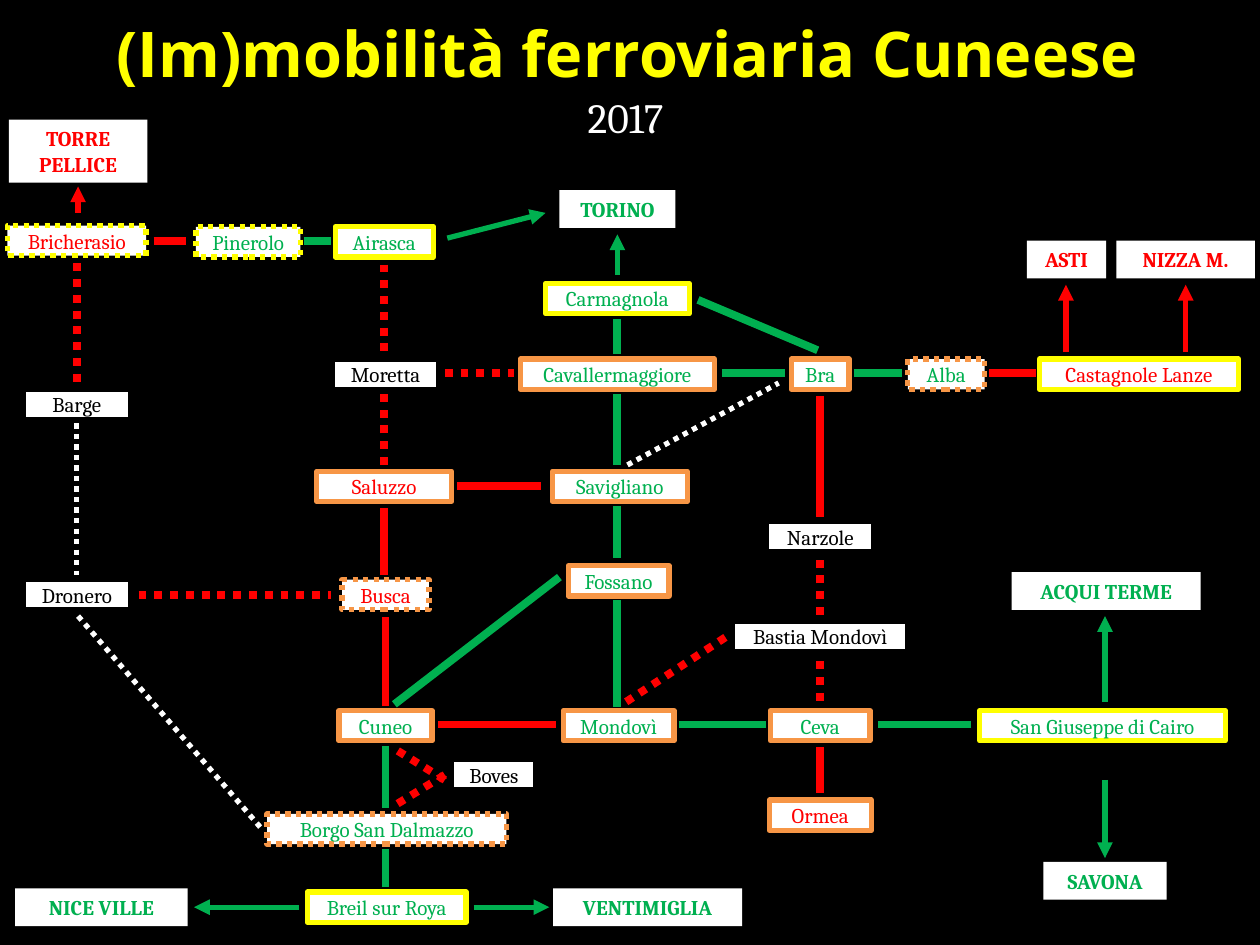
from dataclasses import dataclass

from lxml.etree import SubElement
from pptx import Presentation
from pptx.dml.color import RGBColor
from pptx.enum.dml import MSO_LINE
from pptx.enum.shapes import MSO_CONNECTOR, MSO_SHAPE
from pptx.enum.text import MSO_ANCHOR, PP_ALIGN
from pptx.oxml.ns import qn
from pptx.util import Inches, Pt

COLORS = {"black": "000000", "white": "FFFFFF", "yellow": "FFFF00",
          "orange": "F79646", "green": "00B050", "red": "FF0000"}
SERIF, SANS = "Cambria", "Open Sans"
STATION_HEIGHT = 0.24

# Shared columns and rows of the railway map
WEST, SALUZZO, TURIN, CEVA = 0.61, 3.06, 4.9, 6.51
AIRASCA, MORETTA, SAVIGLIANO, BUSCA, CUNEO, BREIL = 1.91, 2.97, 3.86, 4.72, 5.76, 7.2

# Name, centre x, centre y, width, text colour, border colour, dashed border
STATIONS = [
    ("Bricherasio", WEST, AIRASCA, 1.1, "red", "yellow", True),
    ("Pinerolo", 1.97, 1.92, 0.83, "green", "yellow", True),
    ("Airasca", 3.05, 1.92, 0.78, "green", "yellow", False),
    ("Carmagnola", TURIN, 2.37, 1.14, "green", "yellow", False),
    ("Moretta", SALUZZO, MORETTA, 0.85, "black", "black", False),
    ("Cavallermaggiore", TURIN, MORETTA, 1.54, "green", "orange", False),
    ("Bra", CEVA, MORETTA, 0.46, "green", "orange", False),
    ("Alba", 7.51, MORETTA, 0.61, "green", "orange", True),
    ("Castagnole Lanze", 9.04, MORETTA, 1.58, "red", "yellow", False),
    ("Barge", WEST, 3.21, 0.85, "black", "black", False),
    ("Saluzzo", 3.05, SAVIGLIANO, 1.07, "red", "orange", False),
    ("Savigliano", 4.92, SAVIGLIANO, 1.07, "green", "orange", False),
    ("Narzole", CEVA, 4.26, 0.85, "black", "black", False),
    ("Fossano", 4.91, 4.61, 0.8, "green", "orange", False),
    ("Dronero", WEST, BUSCA, 0.85, "black", "black", False),
    ("Busca", SALUZZO, BUSCA, 0.69, "red", "orange", True),
    ("Bastia Mondovì", CEVA, 5.05, 1.39, "black", "black", False),
    ("Cuneo", SALUZZO, CUNEO, 0.74, "green", "orange", False),
    ("Mondovì", 4.91, CUNEO, 0.88, "green", "orange", False),
    ("Ceva", CEVA, CUNEO, 0.79, "green", "orange", False),
    ("San Giuseppe di Cairo", 8.75, CUNEO, 1.95, "green", "yellow", False),
    ("Boves", 3.92, 6.15, 0.67, "black", "black", False),
    ("Ormea", CEVA, 6.47, 0.81, "red", "orange", False),
    ("Borgo San Dalmazzo", 3.07, 6.58, 1.9, "green", "orange", True),
    ("Breil sur Roya", 3.07, BREIL, 1.26, "green", "yellow", False),
]

# Railway links as x1, y1, x2, y2, grouped by state of service
OPEN_LINKS = [
    (7.71, 5.75, 6.97, 5.75), (6.08, 5.75, 5.39, 5.75),
    (SALUZZO, 5.92, SALUZZO, 6.41), (SALUZZO, 6.74, SALUZZO, 7.04),
    (TURIN, 5.61, TURIN, 4.76), (TURIN, 4.43, TURIN, 4.02),
    (TURIN, 3.69, TURIN, 3.13), (TURIN, 2.81, TURIN, 2.53),
    (5.73, 2.96, 6.23, 2.96), (6.78, 2.96, 7.16, 2.96),
    (6.49, 2.78, 5.54, 2.38), (4.44, 4.58, 3.13, 5.59),
    (2.41, AIRASCA, 2.63, AIRASCA),
]
SUSPENDED_LINKS = [
    (4.41, 5.75, 3.48, 5.75), (CEVA, 4.1, CEVA, 3.14),
    (CEVA, 5.93, CEVA, 6.29), (7.85, 2.96, 8.22, 2.96),
    (3.63, SAVIGLIANO, 4.29, SAVIGLIANO), (SALUZZO, 5.6, SALUZZO, 4.9),
    (3.05, 4.03, 3.05, 4.56), (1.22, AIRASCA, 1.48, AIRASCA),
]
CLOSED_LINKS = [
    (CEVA, 5.56, CEVA, 5.19), (4.97, 5.57, 5.77, 5.05),
    (CEVA, 4.88, CEVA, 4.42), (3.53, 2.96, 4.08, 2.96),
    (3.05, 3.69, 3.05, 3.12), (3.05, 2.1, 3.05, 2.8),
    (1.1, BUSCA, 2.63, BUSCA), (WEST, 2.09, WEST, 3.09),
    (3.53, 6.15, 3.12, 6.4), (3.53, 6.19, 3.11, 5.93),
]
PLANNED_LINKS = [(WEST, 3.36, WEST, 4.56), (0.62, 4.89, 2.07, 6.57),
                 (4.98, 3.69, 6.18, 3.04)]
# Links, colour, width in points, dotted
LINK_GROUPS = [(OPEN_LINKS, "green", 4.5, False), (SUSPENDED_LINKS, "red", 4.5, False),
               (CLOSED_LINKS, "red", 4.5, True), (PLANNED_LINKS, "white", 3, True)]

# Name, label left, top, width, height, colour, arrow from the network
DESTINATIONS = [
    ("TORRE PELLICE", 0.07, 0.95, 1.1, 0.5, "red", (0.62, 1.69, 0.62, 1.48)),
    ("ASTI", 8.15, 1.91, 0.63, 0.3, "red", (8.46, 2.79, 8.46, 2.26)),
    ("NIZZA M.", 8.86, 1.91, 1.1, 0.3, "red", (9.41, 2.79, 9.41, 2.26)),
    ("TORINO", 4.44, 1.51, 0.92, 0.3, "green", (TURIN, 2.18, TURIN, 1.86)),
    ("ACQUI TERME", 8.03, 4.54, 1.5, 0.3, "green", (8.77, 5.57, 8.77, 4.89)),
    ("SAVONA", 8.28, 6.84, 0.98, 0.3, "green", (8.77, 6.19, 8.77, 6.81)),
    ("VENTIMIGLIA", 4.39, 7.05, 1.5, 0.3, "green", (3.76, BREIL, 4.36, BREIL)),
    ("NICE VILLE", 0.12, 7.05, 1.37, 0.3, "green", (2.37, BREIL, 1.54, BREIL)),
]
AIRASCA_TO_TORINO = (3.55, 1.89, 4.33, 1.69)


@dataclass
class Box:
    left: float
    top: float
    width: float
    height: float

    def inside(self, left, top, width, height):
        return Box(self.left + left, self.top + top, width, height)

    def lengths(self):
        return [Inches(side) for side in (self.left, self.top, self.width, self.height)]


def color(name):
    return RGBColor.from_string(COLORS[name])


def write(shape, text, size, color_name, font=SERIF, bold=False):
    frame = shape.text_frame
    frame.text = text
    frame.word_wrap = True
    frame.vertical_anchor = MSO_ANCHOR.MIDDLE
    para = frame.paragraphs[0]
    para.alignment = PP_ALIGN.CENTER
    span = para.runs[0].font
    span.name, span.size, span.bold = font, Pt(size), bold
    span.color.rgb = color(color_name)
    return para


def add_panel(page, box, text, text_color, bold=False):
    panel = page.shapes.add_shape(MSO_SHAPE.RECTANGLE, *box.lengths())
    panel.shadow.inherit = False
    panel.fill.solid()
    panel.fill.fore_color.rgb = color("white")
    panel.line.fill.background()
    write(panel, text, 12, text_color, bold=bold)
    return panel


def add_link(page, box, ends, color_name, width, dotted=False, arrow=False):
    x1, y1, x2, y2 = ends
    link = page.shapes.add_connector(
        MSO_CONNECTOR.STRAIGHT, Inches(box.left + x1), Inches(box.top + y1),
        Inches(box.left + x2), Inches(box.top + y2))
    link.line.color.rgb = color(color_name)
    link.line.width = Pt(width)
    if dotted:
        link.line.dash_style = MSO_LINE.ROUND_DOT
    if arrow:
        SubElement(link.line._get_or_add_ln(), qn("a:tailEnd"), type="triangle")
    SubElement(link._element.spPr, qn("a:effectLst"))


def place(placeholder, box):
    (placeholder.left, placeholder.top,
     placeholder.width, placeholder.height) = box.lengths()


def draw_heading(page, box):
    title, year = page.shapes.title, page.placeholders[1]
    place(title, box.inside(0, 0, box.width, 0.73))
    write(title, "(Im)mobilità ferroviaria Cuneese", 36, "yellow", SANS, True)
    place(year, box.inside(0.16, 0.66, 9.37, 0.44))
    properties = write(year, "2017", 23.8, "white")._p.get_or_add_pPr()
    properties.set("marL", "0")
    properties.set("indent", "0")
    SubElement(properties, qn("a:buNone"))


def draw_stations(page, box):
    for name, x, y, width, text_color, border, dashed in STATIONS:
        spot = box.inside(x - width / 2, y - STATION_HEIGHT / 2, width, STATION_HEIGHT)
        station = add_panel(page, spot, name, text_color)
        station.text_frame.margin_left = station.text_frame.margin_right = Inches(0.04)
        station.line.color.rgb = color(border)
        station.line.width = Pt(3)
        if dashed:
            station.line.dash_style = MSO_LINE.ROUND_DOT


def draw_links(page, box):
    for links, color_name, width, dotted in LINK_GROUPS:
        for ends in links:
            add_link(page, box, ends, color_name, width, dotted)


def draw_destinations(page, box):
    for name, left, top, width, height, color_name, arrow in DESTINATIONS:
        add_panel(page, box.inside(left, top, width, height), name, color_name, bold=True)
        add_link(page, box, arrow, color_name, 3, arrow=True)
    add_link(page, box, AIRASCA_TO_TORINO, "green", 3, arrow=True)


def main():
    deck = Presentation()
    deck.slide_width, deck.slide_height = Inches(10), Inches(7.5)
    page = deck.slides.add_slide(deck.slide_layouts[1])
    page.background.fill.solid()
    page.background.fill.fore_color.rgb = color("black")

    draw_heading(page, Box(0.12, 0.05, 9.72, 1.1))
    railway_map = Box(0, 0, 10, 7.5)
    draw_stations(page, railway_map)
    draw_links(page, railway_map)
    draw_destinations(page, railway_map)
    deck.save("out.pptx")


if __name__ == "__main__":
    main()
